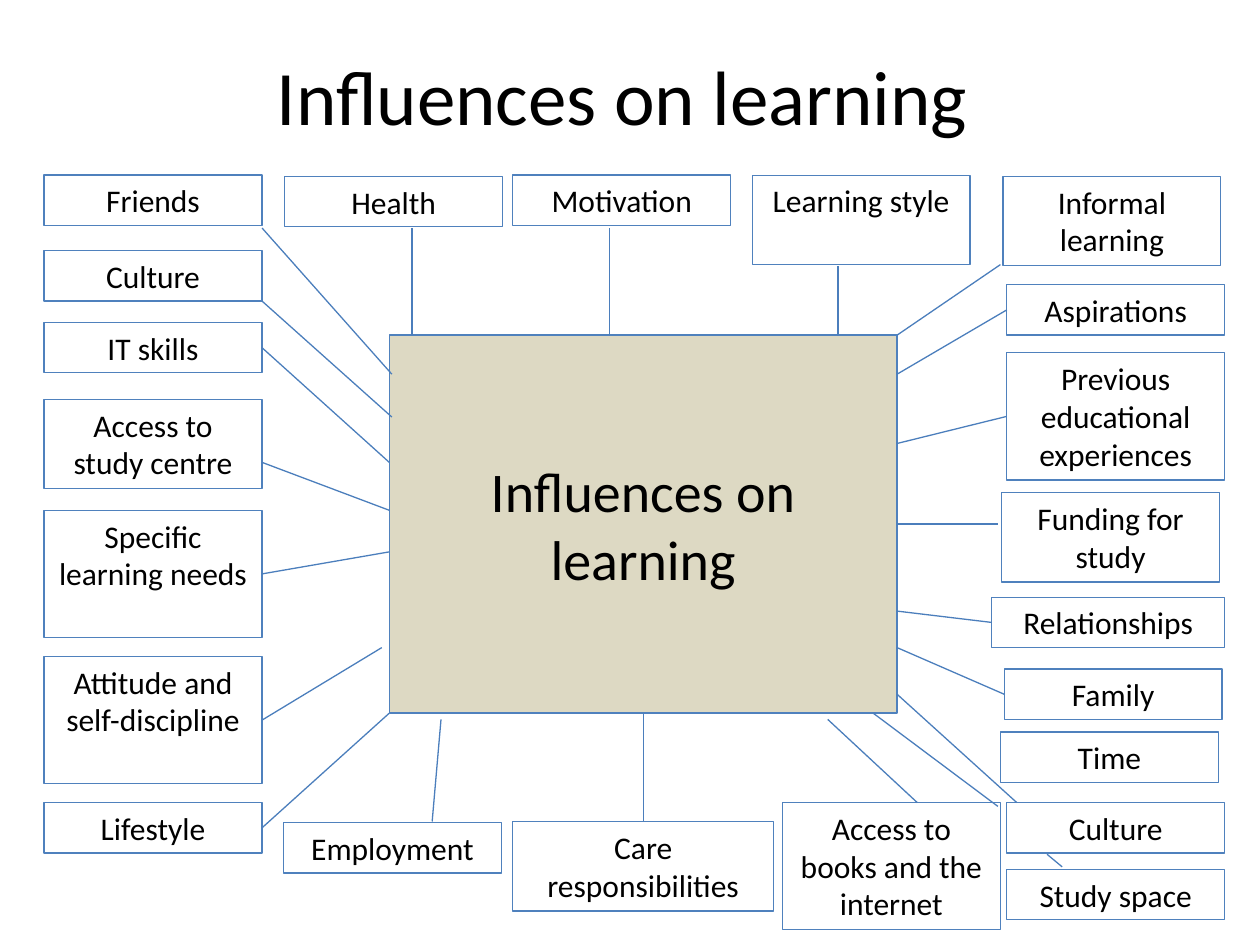
import dataclasses

import pptx
import pptx.dml.color
import pptx.enum.shapes
import pptx.enum.text
import pptx.oxml
import pptx.util

Inches = pptx.util.Inches
Anchor = pptx.enum.text.MSO_ANCHOR
TOP, LEFT, BOTTOM, RIGHT = range(4)


@dataclasses.dataclass(frozen=True)
class Theme:
    """Colours, font and sizes of the slide."""
    font: str = "Calibri"
    text: str = "000000"
    hub_fill: str = "DDD9C3"
    border: str = "4F81BD"
    spoke: str = "4B7EBC"
    line_width: float = 0.75
    title_size: int = 44
    hub_size: int = 32
    topic_size: int = 18


@dataclasses.dataclass(frozen=True)
class Box:
    """A rectangle in inches."""
    left: float
    top: float
    width: float
    height: float


@dataclasses.dataclass(frozen=True)
class Topic:
    """A topic's text, offset in its region, and spokes as (hub end, topic end).

    An end is a connection site or an offset from the shape's top left corner.
    """
    text: str
    left: float
    top: float
    spokes: tuple = ()
    lines: int = 1
    width: float = 1.73


THEME = Theme()
TOPIC_HEIGHTS = {1: 0.4, 2: 0.71, 3: 1.01}
TITLE_BOX = Box(0.44, 0.13, 9, 1.25)
HUB_BOX = Box(3.09, 2.66, 4.03, 3)

REGIONS = [
    (Box(0.35, 1.39, 1.73, 5.38), [
        Topic("Friends", 0, 0, (((0.02, 0.31), (1.73, 0.42)),)),
        Topic("Culture", 0, 0.6, (((0.02, 0.65), (1.73, 0.4)),)),
        Topic("IT skills", 0, 1.17, (((0, 1.01), RIGHT),)),
        Topic("Access to study centre", 0, 1.78, (((0, 1.39), (1.73, 0.5)),), 2),
        Topic("Specific learning needs", 0, 2.66, (((0, 1.72), RIGHT),), 3),
        Topic("Attitude and self-discipline", 0, 3.82, (((-0.06, 2.48), RIGHT),), 3),
        Topic("Lifestyle", 0, 4.98, (((0, 3), RIGHT),)),
    ]),
    (Box(2.26, 1.39, 5.44, 0.71), [
        Topic("Health", 0, 0.01, (((0.18, 0), (1.01, 0.41)),)),
        Topic("Motivation", 1.81, 0, (((1.75, 0), (0.77, 0.42)),)),
        Topic("Learning style", 3.71, 0, (((3.56, 0), (0.68, 0.72)),), 2),
    ]),
    (Box(7.87, 1.4, 1.85, 5.9), [
        Topic("Informal learning", 0.09, 0, (((4.03, 0), (-0.02, 0.7)),), 2),
        Topic("Aspirations", 0.12, 0.86, (((4.03, 0.31), LEFT),)),
        Topic("Previous educational experiences", 0.12, 1.4, (((4.03, 0.86), LEFT),), 3),
        Topic("Funding for study", 0.08, 2.51, ((RIGHT, (-0.03, 0.25)),), 2),
        Topic("Relationships", 0, 3.34, (((4.03, 2.19), LEFT),), width=1.85),
        Topic("Family", 0.1, 3.91, (((4.03, 2.48), LEFT),)),
        Topic("Time", 0.07, 4.41),
        Topic("Culture", 0.12, 4.97, (((4.03, 2.85), (0.08, 0)),)),
        Topic("Study space", 0.12, 5.5, (((5.22, 4.12), (0.44, -0.02)),)),
    ]),
    (Box(2.25, 6.37, 5.69, 1.01), [
        Topic("Employment", 0, 0.16, (((0.41, 3.05), (1.18, -0.01)),)),
        Topic("Care responsibilities", 1.82, 0.15, ((BOTTOM, TOP),), 2, 2.07),
        Topic("Access to books and the internet", 3.96, 0,
              (((3.48, 3.05), (1.07, 0)), ((3.84, 3), (1.71, 0.03))), 3),
    ]),
]


def rgb(value):
    """Return a colour from its hex value."""
    return pptx.dml.color.RGBColor.from_string(value)


def write_text(shape, text, size, anchor):
    """Write centred, wrapped text in a shape."""
    text_frame = shape.text_frame
    text_frame.word_wrap = True
    text_frame.vertical_anchor = anchor
    text_frame.text = text
    paragraph = text_frame.paragraphs[0]
    paragraph.alignment = pptx.enum.text.PP_ALIGN.CENTER
    font = paragraph.runs[0].font
    font.name = THEME.font
    font.size = pptx.util.Pt(size)
    font.color.rgb = rgb(THEME.text)


def add_title(slide, box):
    """Add the title text in the given box."""
    title = slide.shapes.add_textbox(
        Inches(box.left), Inches(box.top), Inches(box.width), Inches(box.height))
    write_text(title, "Influences on learning", THEME.title_size, Anchor.MIDDLE)


def add_rectangle(slide, box, fill=None):
    """Add a bordered rectangle, filled if a colour is given."""
    shape = slide.shapes.add_shape(
        pptx.enum.shapes.MSO_SHAPE.RECTANGLE,
        Inches(box.left), Inches(box.top), Inches(box.width), Inches(box.height))
    shape.shadow.inherit = False
    if fill:
        shape.fill.solid()
        shape.fill.fore_color.rgb = rgb(fill)
    else:
        shape.fill.background()
    shape.line.color.rgb = rgb(THEME.border)
    shape.line.width = pptx.util.Pt(THEME.line_width)
    return shape


def add_hub(slide, box):
    """Add the central box and return it."""
    hub = add_rectangle(slide, box, THEME.hub_fill)
    write_text(hub, "Influences on learning", THEME.hub_size, Anchor.MIDDLE)
    return hub


def add_spoke(slide, hub, hub_end, topic_shape, topic_end):
    """Draw a line from the hub to a topic, joined wherever an end is a site."""
    connector = slide.shapes.add_connector(
        pptx.enum.shapes.MSO_CONNECTOR.STRAIGHT, 0, 0, 0, 0)
    if isinstance(hub_end, int):
        connector.begin_connect(hub, hub_end)
    else:
        connector.begin_x = hub.left + Inches(hub_end[0])
        connector.begin_y = hub.top + Inches(hub_end[1])
    if isinstance(topic_end, int):
        connector.end_connect(topic_shape, topic_end)
    else:
        connector.end_x = topic_shape.left + Inches(topic_end[0])
        connector.end_y = topic_shape.top + Inches(topic_end[1])
    connector.line.color.rgb = rgb(THEME.spoke)
    connector.line.width = pptx.util.Pt(THEME.line_width)
    connector._element.spPr.append(pptx.oxml.parse_xml(
        '<a:effectLst xmlns:a="http://schemas.openxmlformats.org/drawingml/2006/main"/>'))


def add_topics(slide, box, topics, hub):
    """Add the topics of one region and their spokes to the hub."""
    for topic in topics:
        shape = add_rectangle(slide, Box(
            box.left + topic.left, box.top + topic.top,
            topic.width, TOPIC_HEIGHTS[topic.lines]))
        write_text(shape, topic.text, THEME.topic_size, Anchor.TOP)
        for hub_end, topic_end in topic.spokes:
            add_spoke(slide, hub, hub_end, shape, topic_end)


def main():
    """Build and save the presentation."""
    presentation = pptx.Presentation()
    presentation.slide_width = Inches(10)
    presentation.slide_height = Inches(7.5)
    slide = presentation.slides.add_slide(presentation.slide_layouts[6])
    add_title(slide, TITLE_BOX)
    hub = add_hub(slide, HUB_BOX)
    for box, topics in REGIONS:
        add_topics(slide, box, topics, hub)
    presentation.save("out.pptx")


if __name__ == "__main__":
    main()
